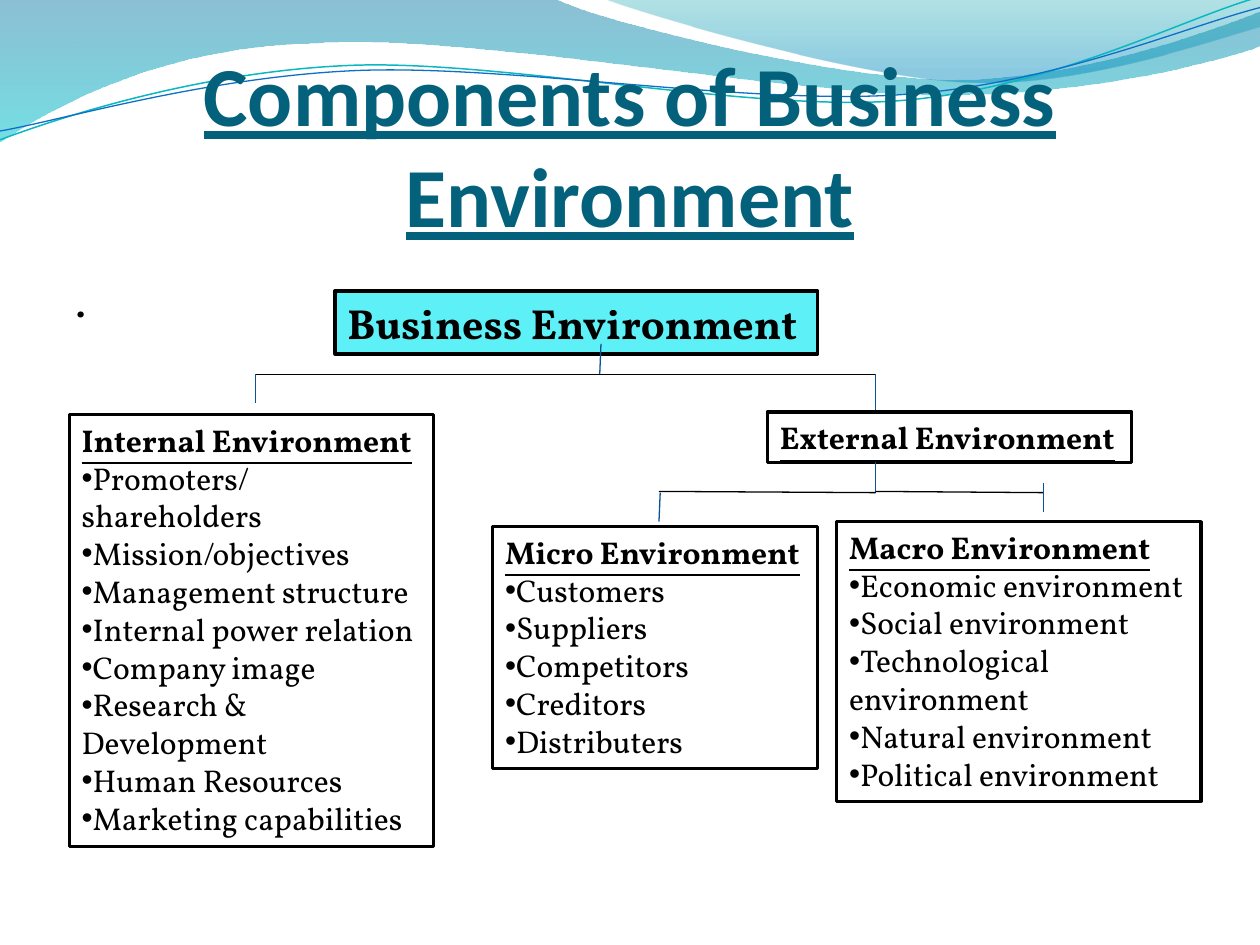
from math import cos, radians, sin

from lxml import etree
from pptx import Presentation
from pptx.dml.color import RGBColor
from pptx.enum.shapes import MSO_CONNECTOR, MSO_SHAPE
from pptx.enum.text import MSO_ANCHOR, MSO_AUTO_SIZE, PP_ALIGN
from pptx.oxml.ns import qn
from pptx.util import Inches, Pt

RECT = MSO_SHAPE.RECTANGLE
STRAIGHT = MSO_CONNECTOR.STRAIGHT
GROW = MSO_AUTO_SIZE.SHAPE_TO_FIT_TEXT
SERIF = "Vollkorn"
BLACK, WHITE, BLUE = "000000", "FFFFFF", "095295"
TILT = 2.7

# Each wave: start point, then cubic curves (6 numbers) or straight edges (2).
LEFT_WAVE = [(0, 0), (4.4, -0.01), (4.76, 0.17, 6.64, 0.63, 7.58, 0.63),
             (8.53, 0.63, 9.58, 0.26, 10, 0.09), (10.01, 0.36),
             (9.83, 0.44, 8.7, 0.76, 7.46, 0.75),
             (6.22, 0.75, 3.82, 0.28, 2.57, 0.34),
             (1.29, 0.36, 0.46, 0.83, -0.01, 1.13), (0, 0)]
RIGHT_WAVE = [(4.79, -0.01), (5.09, 0.11, 6.82, 0.62, 7.69, 0.65),
              (8.56, 0.69, 9.61, 0.32, 10, 0.21), (10, 0), (4.79, -0.01)]
TEAL_LINE = [(0, 1.11), (0.48, 0.93, 1.58, 0.57, 2.77, 0.52),
             (3.95, 0.47, 5.93, 0.89, 7.13, 0.8),
             (8.33, 0.71, 9.38, 0.15, 9.98, -0.02)]
BLUE_LINE = [(0, 1.04), (0.47, 0.96, 1.64, 0.61, 2.83, 0.56),
             (4.03, 0.51, 5.97, 0.84, 7.17, 0.75),
             (8.36, 0.67, 9.41, 0.21, 10, 0.06)]

INTERNAL = ["Promoters/shareholders", "Mission/objectives",
            "Management structure", "Internal power relation",
            "Company image", "Research & Development", "Human Resources",
            "Marketing capabilities"]
MICRO = ["Customers", "Suppliers", "Competitors", "Creditors", "Distributers"]
MACRO = ["Economic environment", "Social environment",
         "Technological environment", "Natural environment",
         "Political environment"]


def color(code):
    return RGBColor.from_string(code)


def turn(part, box, angle):
    """Turn the points of one path part about the centre of the box."""
    left, top, width, height = box
    mid_x, mid_y = left + width / 2, top + height / 2
    c, s = cos(radians(angle)), sin(radians(angle))
    pairs = [(x - mid_x, y - mid_y) for x, y in zip(part[::2], part[1::2])]
    return [(mid_x + x * c - y * s, mid_y + x * s + y * c) for x, y in pairs]


def add_curve(slide, box, path, close, tilt=0):
    """Add an outline of cubic curves, leaning left by tilt degrees."""
    parts = [turn(part, box, tilt) for part in path]
    ends = [(Inches(x), Inches(y)) for x, y in (part[-1] for part in parts)]
    pen = slide.shapes.build_freeform(*ends[0])
    pen.add_line_segments(ends[1:], close=close)
    shape = pen.convert_to_shape()
    shape.shadow.inherit = False
    shape.left, shape.top, shape.width, shape.height = map(Inches, box)
    shape.rotation = -tilt
    trail = shape._element.spPr.find(".//" + qn("a:path"))
    trail.set("w", str(shape.width))
    trail.set("h", str(shape.height))
    for step, part in zip(list(trail), parts):
        for point in list(step):
            step.remove(point)
        for x, y in part:
            etree.SubElement(step, qn("a:pt"), x=str(Inches(x - box[0])),
                             y=str(Inches(y - box[1])))
        if len(part) == 3:
            step.tag = qn("a:cubicBezTo")
    return shape


def add_wave(slide, box, path, stops):
    """Add a filled wave; stops are (position, colour, opacity percent)."""
    shape = add_curve(slide, box, path, True)
    shape.line.fill.background()
    shape.fill.gradient()
    shape.fill.gradient_angle = 270
    for stop, (place, code, _) in zip(shape.fill.gradient_stops, stops):
        stop.position = place
        stop.color.rgb = color(code)
    tints = shape._element.spPr.iter(qn("a:srgbClr"))
    for tint, (_, _, alpha) in zip(tints, stops):
        etree.SubElement(tint, qn("a:alpha"), val=str(alpha * 1000))


def add_banner(slide):
    add_wave(slide, (-0.01, -0.01, 10.02, 1.14), LEFT_WAVE,
             [(0, "0074A1", 45), (1, "00C6CF", 55)])
    add_wave(slide, (4.79, -0.01, 5.21, 0.7), RIGHT_WAVE,
             [(0, "00A1A9", 30), (0.8, "008BBF", 45)])
    for box, path, code, width in [
            ((-0.02, 0.22, 10.02, 0.71), TEAL_LINE, "0AB8BF", 0.85),
            ((-0.02, 0.3, 10.03, 0.58), BLUE_LINE, "0F6FC6", 0.75)]:
        shape = add_curve(slide, box, path, False, TILT)
        shape.fill.background()
        shape.line.color.rgb = color(code)
        shape.line.width = Pt(width)


def style(para, size, code=BLACK, face=SERIF, strong=False):
    for run in para.runs:
        font = run.font
        font.size, font.name = Pt(size), face
        font.bold = font.underline = strong
        font.color.rgb = color(code)


def add_text(slide, box, text):
    frame = slide.shapes.add_textbox(*map(Inches, box)).text_frame
    frame.word_wrap = True
    frame.text = text
    return frame


def add_title(slide, box):
    frame = add_text(slide, box, "Components of Business Environment")
    frame.vertical_anchor = MSO_ANCHOR.BOTTOM
    frame.margin_left = frame.margin_right = frame.margin_bottom = 0
    para = frame.paragraphs[0]
    para.alignment = PP_ALIGN.CENTER
    style(para, 48, "04617B", "Calibri", True)


def add_body(slide, box):
    para = add_text(slide, box, ".").paragraphs[0]
    para.space_before = Pt(5)
    style(para, 26)


def add_bullet(para):
    props = para._p.get_or_add_pPr()
    etree.SubElement(props, qn("a:buFont"), typeface="Arial")
    etree.SubElement(props, qn("a:buChar"), char="•")


def add_card(slide, box, head, items=(), size=18, fill=WHITE):
    shape = slide.shapes.add_shape(RECT, *map(Inches, box))
    shape.shadow.inherit = False
    shape.fill.solid()
    shape.fill.fore_color.rgb = color(fill)
    shape.line.color.rgb = color(BLACK)
    shape.line.width = Pt(2)
    frame = shape.text_frame
    frame.word_wrap = True
    frame.auto_size = GROW
    frame.vertical_anchor = MSO_ANCHOR.TOP
    frame.text = "\n".join([head, *items])
    for i, para in enumerate(frame.paragraphs):
        para.alignment = PP_ALIGN.LEFT
        style(para, size, strong=i == 0)
        if i:
            add_bullet(para)


def add_links(slide, code, ends):
    for x1, y1, x2, y2 in ends:
        link = slide.shapes.add_connector(
            STRAIGHT, *map(Inches, (x1, y1, x2, y2)))
        link.line.color.rgb = color(code)
        link.line.width = Pt(0.75)
        etree.SubElement(link._element.spPr, qn("a:effectLst"))


def main():
    deck = Presentation()
    deck.slide_width, deck.slide_height = Inches(10), Inches(7.5)
    slide = deck.slides.add_slide(deck.slide_layouts[6])
    add_banner(slide)
    add_title(slide, (0.5, 0.47, 9, 1.47))
    add_body(slide, (0.5, 2.11, 9, 5.39))
    add_card(slide, (2.66, 2.31, 3.83, 0.5), "Business Environment",
             size=24, fill="5EF0F7")
    add_links(slide, BLUE, [(4.77, 2.73, 4.76, 2.97)])
    add_links(slide, BLACK, [(4.77, 2.97, 2.03, 2.97), (4.77, 2.97, 6.95, 2.97)])
    add_links(slide, BLUE, [(2.03, 2.97, 2.03, 3.2)])
    add_card(slide, (0.55, 3.29, 2.89, 3.43), "Internal Environment", INTERNAL)
    add_links(slide, BLUE, [(6.95, 2.97, 6.95, 3.28)])
    add_card(slide, (6.09, 3.27, 2.89, 0.4), "External Environment")
    add_links(slide, BLUE, [(6.95, 3.67, 6.95, 3.91)])
    add_links(slide, BLACK, [(6.95, 3.91, 5.23, 3.9), (6.95, 3.9, 8.28, 3.91)])
    add_links(slide, BLUE, [(5.24, 3.91, 5.23, 4.14)])
    add_card(slide, (3.91, 4.18, 2.58, 1.92), "Micro Environment", MICRO)
    add_links(slide, BLUE, [(8.28, 3.83, 8.28, 4.06)])
    add_card(slide, (6.64, 4.14, 2.89, 2.22), "Macro Environment", MACRO)
    deck.save("out.pptx")


if __name__ == "__main__":
    main()
